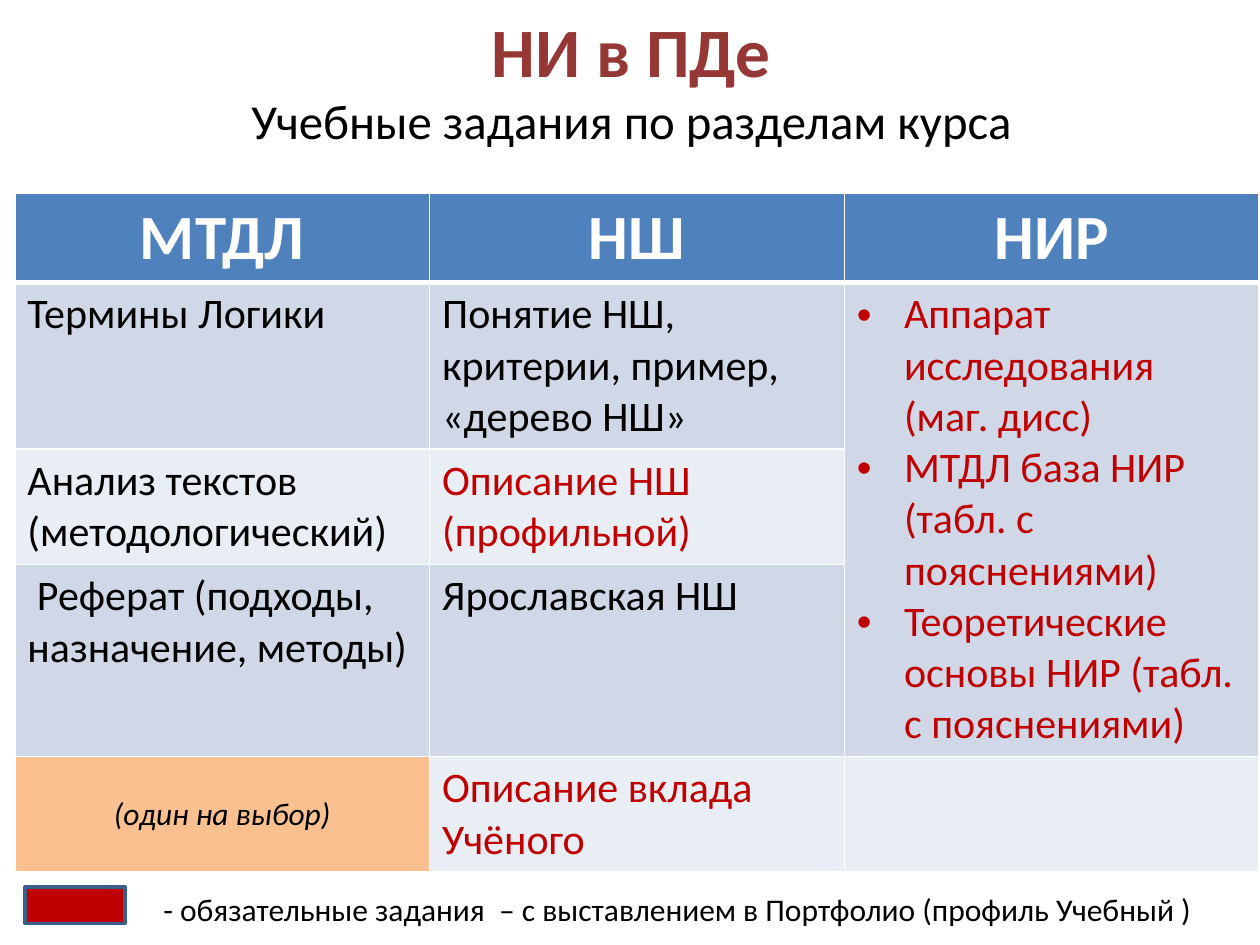
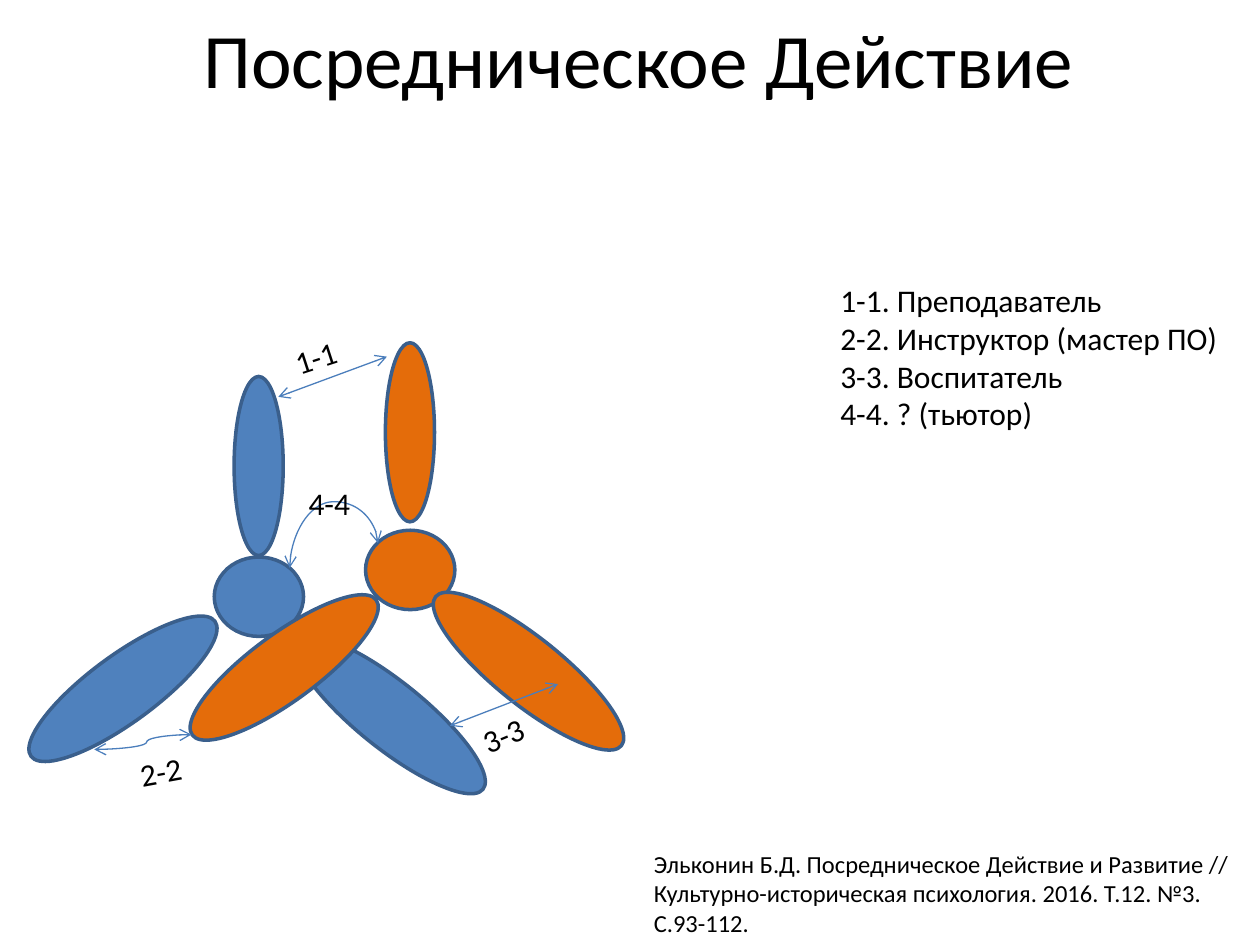
"""Builds two slides on learning tasks and the mediating action."""
from lxml.etree import SubElement
from pptx import Presentation
from pptx.dml.color import RGBColor
from pptx.enum.shapes import MSO_CONNECTOR as LINK, MSO_SHAPE as SHAPE
from pptx.enum.text import MSO_ANCHOR as ANCHOR, MSO_AUTO_SIZE as AUTO, PP_ALIGN as ALIGN
from pptx.oxml.ns import qn
from pptx.util import Cm, Pt

COLORS = {
    "black": "000000", "white": "FFFFFF", "maroon": "953735", "red": "C00000",
    "blue": "4F81BD", "orange": "E46C0A", "peach": "FAC090",
    "band_dark": "D0D8E8", "band_light": "E9EDF4",
    "outline": "3A5F8C", "arrow": "4B7EBC",
}
FONT = "Calibri"


def color(name):
    return RGBColor.from_string(COLORS[name])


class Deck:
    """Holds the presentation, its style and the current slide."""

    def __init__(self):
        self.prs = Presentation()
        self.prs.slide_width, self.prs.slide_height = Cm(25.4), Cm(19.05)
        self.slide = None

    def style(self, font, size, tint="black", bold=None, italic=None):
        font.name, font.size, font.bold, font.italic = FONT, Pt(size), bold, italic
        font.color.rgb = color(tint)

    def fill_text(self, frame, lines, size, tint="black", align=ALIGN.LEFT, **emphasis):
        frame.text = "\n".join(lines)
        for paragraph in frame.paragraphs:
            paragraph.alignment = align
            self.style(paragraph.font, size, tint, **emphasis)

    def new_slide(self, left, height, *title_lines):
        self.slide = self.prs.slides.add_slide(self.prs.slide_layouts[5])
        title = self.slide.shapes.title
        title.left, title.top, title.width, title.height = Cm(left), 0, Cm(22.86), Cm(height)
        frame = title.text_frame
        frame.auto_size, frame.vertical_anchor = AUTO.NONE, ANCHOR.MIDDLE
        heading = frame.paragraphs[0]
        heading.alignment = ALIGN.CENTER
        for index, (text, size, tint, bold) in enumerate(title_lines):
            if index:
                heading.add_line_break()
            run = heading.add_run()
            run.text = text
            self.style(run.font, size, tint, bold)

    def text(self, box, lines, size=18, rotation=0, wrap=True):
        label = self.slide.shapes.add_textbox(*map(Cm, box))
        label.rotation = rotation
        label.text_frame.word_wrap = wrap
        self.fill_text(label.text_frame, lines, size)

    def shape(self, kind, box, fill, rotation=0):
        figure = self.slide.shapes.add_shape(kind, *map(Cm, box))
        figure.rotation = rotation
        figure.shadow.inherit = False
        figure.fill.solid()
        figure.fill.fore_color.rgb = color(fill)
        figure.line.color.rgb = color("outline")
        figure.line.width = Pt(2)

    def arrow(self, start, end, bend=None, rotation=0):
        kind = LINK.STRAIGHT if bend is None else LINK.CURVE
        link = self.slide.shapes.add_connector(kind, *map(Cm, start + end))
        link.line.color.rgb = color("arrow")
        link.line.width = Pt(0.75)
        props = link._element.spPr
        for side in ("headEnd", "tailEnd"):
            SubElement(props.find(qn("a:ln")), qn(f"a:{side}"), type="arrow")
        SubElement(props, qn("a:effectLst"))
        if bend is not None:
            guides = props.find(qn("a:prstGeom")).find(qn("a:avLst"))
            SubElement(guides, qn("a:gd"), name="adj1", fmla=f"val {round(bend * 100000)}")
        if rotation:
            props.find(qn("a:xfrm")).set("rot", str(rotation * 60000))

    def table(self, left, top, widths, heights):
        frame = self.slide.shapes.add_table(
            len(heights), len(widths), Cm(left), Cm(top), Cm(sum(widths)), Cm(sum(heights)))
        grid = frame.table
        for column, width in zip(grid.columns, widths):
            column.width = Cm(width)
        for row, height in zip(grid.rows, heights):
            row.height = Cm(height)
        return grid

    def cell(self, cell, lines, fill, size=24, tint="black", bottom=1,
             anchor=ANCHOR.TOP, bullets=False, **emphasis):
        self.fill_text(cell.text_frame, lines, size, tint, **emphasis)
        cell.vertical_anchor = anchor
        cell.fill.solid()
        cell.fill.fore_color.rgb = color(fill)
        props = cell._tc.get_or_add_tcPr()
        for place, (side, width) in enumerate(zip("LRTB", (1, 1, 1, bottom))):
            border = SubElement(props, qn(f"a:ln{side}"), w=str(Pt(width)))
            paint = SubElement(border, qn("a:solidFill"))
            SubElement(paint, qn("a:srgbClr"), val=COLORS["white"])
            props.insert(place, border)
        if bullets:
            for paragraph in cell.text_frame.paragraphs:
                self.bullet(paragraph)

    def bullet(self, paragraph):
        props = paragraph._p.get_or_add_pPr()
        indent = Cm(0.95)
        props.set("marL", str(indent))
        props.set("indent", str(-indent))
        face = SubElement(props, qn("a:buFont"), typeface="Arial")
        mark = SubElement(props, qn("a:buChar"), char="•")
        props.insert(0, face)
        props.insert(1, mark)


def build_tasks(deck):
    deck.new_slide(1.3, 3.18, ("НИ в ПДе", 39.6, "maroon", True),
                   ("Учебные задания по разделам курса", 27.9, "black", False))
    tasks = deck.table(0.3, 3.89, [8.36] * 3, [1.8, 3.35, 2.33, 3.87, 2.3])
    for column, section in enumerate(("МТДЛ", "НШ", "НИР")):
        deck.cell(tasks.cell(0, column), [section], "blue", 36, "white", bottom=3,
                  align=ALIGN.CENTER, bold=True)
    rows = [
        ("Термины Логики", "Понятие НШ, критерии, пример, «дерево НШ»", "black"),
        ("Анализ текстов (методологический)", "Описание НШ (профильной)", "red"),
        (" Реферат (подходы, назначение, методы)", "Ярославская НШ", "black"),
        ("(один на выбор)", "Описание вклада Учёного", "red"),
    ]
    bands = ("band_dark", "band_light") * 2
    for row, ((method, school, tint), band) in enumerate(zip(rows, bands), 1):
        if row < len(rows):
            deck.cell(tasks.cell(row, 0), [method], band)
        else:
            deck.cell(tasks.cell(row, 0), [method], "peach", 18, anchor=ANCHOR.MIDDLE,
                      align=ALIGN.CENTER, italic=True)
        deck.cell(tasks.cell(row, 1), [school], band, tint=tint)
    tasks.cell(1, 2).merge(tasks.cell(3, 2))
    research = ["Аппарат исследования (маг. дисс)", "МТДЛ база НИР (табл. с пояснениями)",
                "Теоретические основы НИР (табл. с пояснениями)"]
    deck.cell(tasks.cell(1, 2), research, "band_dark", tint="red", bullets=True)
    deck.cell(tasks.cell(4, 2), [], "band_light")
    deck.shape(SHAPE.RECTANGLE, (0.51, 17.88, 2.01, 0.74), "red")
    deck.text((2.9, 17.81, 22.2, 1.02),
              [" - обязательные задания  – с выставлением в Портфолио (профиль Учебный )"])


def build_action(deck):
    deck.new_slide(1.45, 2.34, ("Посредническое Действие", 44, "black", False))
    propeller = [
        ((1.8, 1.6), 0, (4.32, 11.23), (7.37, 10.69)),
        ((0.99, 3.61), 0, (4.72, 7.59), (7.77, 6.91)),
        ((4.6, 1.35), 323.7, (0.18, 13.21), (3.43, 12.78)),
        ((1.35, 4.8), 308.7, (7.19, 12.01), (9.98, 11.13)),
    ]
    for actor, tint in enumerate(("blue", "orange")):
        for size, rotation, *places in propeller:
            deck.shape(SHAPE.OVAL, places[actor] + size, tint, rotation)
    deck.text((16.69, 5.54, 8.71, 3.33),
              ["1-1. Преподаватель", "2-2. Инструктор (мастер ПО)",
               "3-3. Воспитатель", "4-4. ? (тьютор)"])
    deck.arrow((5.61, 8), (7.8, 7.19))
    deck.arrow((6.98, 12.09), (6.48, 10.31), bend=2.67, rotation=90)
    deck.arrow((9.07, 14.63), (11.25, 13.79))
    deck.arrow((1.9, 15.11), (3.86, 14.81), bend=0.54)
    relations = [("1-1", 5.69, 6.68, 342), ("4-4", 5.97, 9.63, 0),
                 ("3-3", 9.47, 14.3, 337.3), ("2-2", 2.57, 15.04, 349.7)]
    for relation, left, top, rotation in relations:
        deck.text((left, top, 1.37, 1.02), [relation], rotation=rotation, wrap=False)
    deck.text((12.93, 16.99, 12.4, 2.06),
              ["Эльконин Б.Д. Посредническое Действие и Развитие // "
               "Культурно-историческая психология. 2016. Т.12. №3. С.93-112."], 14)


def main():
    deck = Deck()
    build_tasks(deck)
    build_action(deck)
    deck.prs.save("out.pptx")


if __name__ == "__main__":
    main()
